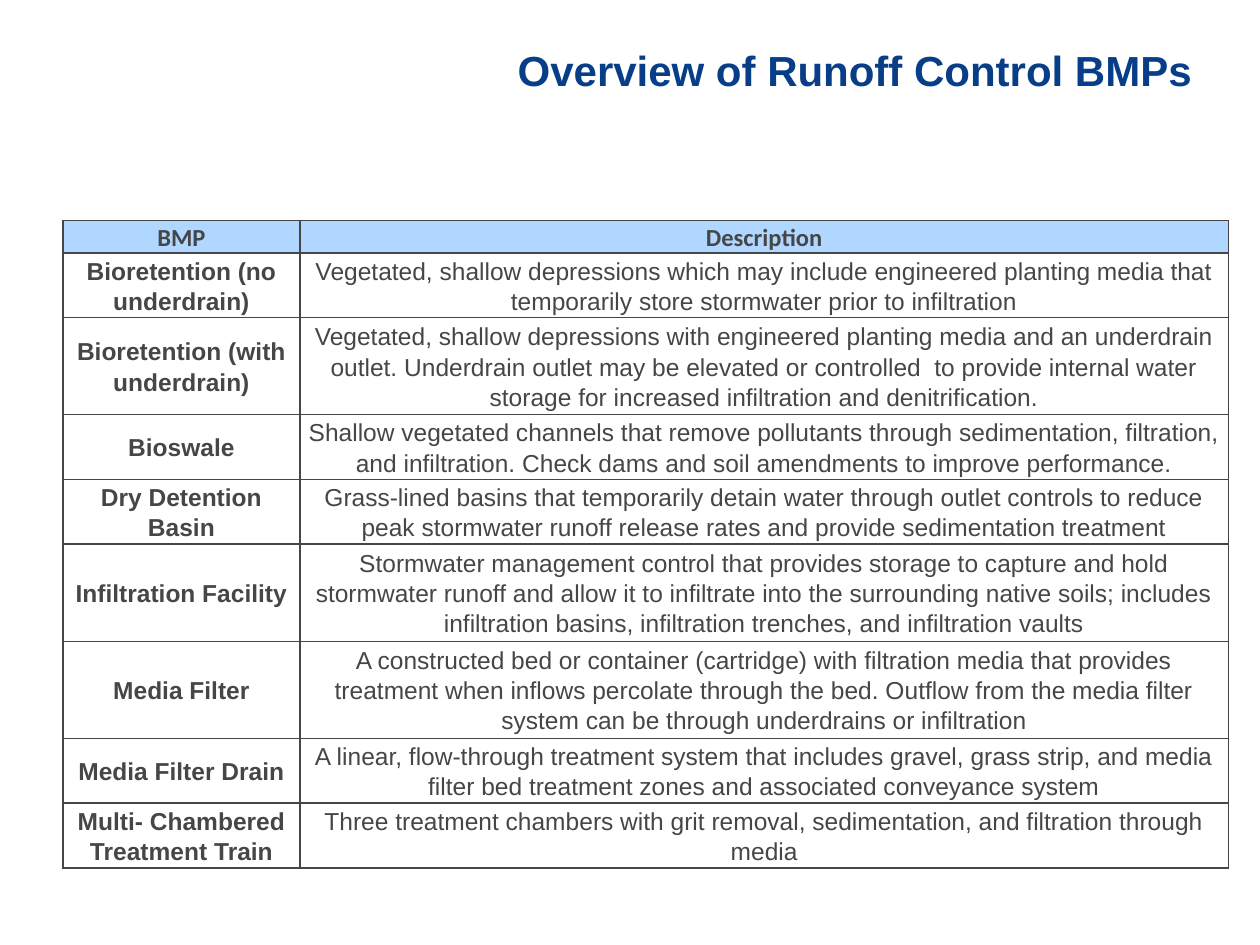
"""Build a slide with a table of runoff control BMPs."""
from lxml import etree
from pptx import Presentation
from pptx.dml.color import RGBColor
from pptx.enum import text
from pptx.oxml import ns
from pptx.util import Inches, Pt

TITLE = "Overview of Runoff Control BMPs"
HEADERS = ("BMP", "Description")
PRACTICES = [
    ("Bioretention (no underdrain)",
     "Vegetated, shallow depressions which may include engineered planting media "
     "that temporarily store stormwater prior to infiltration"),
    ("Bioretention (with underdrain)",
     "Vegetated, shallow depressions with engineered planting media and an underdrain "
     "outlet. Underdrain outlet may be elevated or controlled  to provide internal water "
     "storage for increased infiltration and denitrification."),
    ("Bioswale",
     "Shallow vegetated channels that remove pollutants through sedimentation, filtration, "
     "and infiltration. Check dams and soil amendments to improve performance."),
    ("Dry Detention Basin",
     "Grass-lined basins that temporarily detain water through outlet controls to reduce "
     "peak stormwater runoff release rates and provide sedimentation treatment"),
    ("Infiltration Facility",
     "Stormwater management control that provides storage to capture and hold stormwater "
     "runoff and allow it to infiltrate into the surrounding native soils; includes "
     "infiltration basins, infiltration trenches, and infiltration vaults"),
    ("Media Filter",
     "A constructed bed or container (cartridge) with filtration media that provides "
     "treatment when inflows percolate through the bed. Outflow from the media filter "
     "system can be through underdrains or infiltration"),
    ("Media Filter Drain",
     "A linear, flow-through treatment system that includes gravel, grass strip, and media "
     "filter bed treatment zones and associated conveyance system"),
    ("Multi- Chambered Treatment Train",
     "Three treatment chambers with grit removal, sedimentation, and filtration through media"),
]
COLUMN_WIDTHS = (1.88, 7.37)
SHORT_ROW, TALL_ROW = 0.16, 0.33
SHORT_ROWS = ("BMP", "Media Filter Drain")
NAVY, GRAY, LIGHT_BLUE = "073E87", "464648", "B0D7FF"


def color(value):
    return RGBColor.from_string(value)


def style(paragraph, size, name, value, bold, alignment):
    paragraph.alignment = alignment
    font = paragraph.font
    font.size, font.name, font.bold = Pt(size), name, bold
    font.color.rgb = color(value)


def add_borders(cell):
    properties = cell._tc.get_or_add_tcPr()
    for index, side in enumerate(("lnL", "lnR", "lnT", "lnB")):
        line = etree.Element(ns.qn("a:" + side), w=str(Pt(1)))
        fill = etree.SubElement(line, ns.qn("a:solidFill"))
        etree.SubElement(fill, ns.qn("a:srgbClr"), val=GRAY)
        properties.insert(index, line)


def fill_cell(cell, content, is_header, is_name):
    cell.text = content
    cell.vertical_anchor = text.MSO_ANCHOR.MIDDLE
    cell.margin_left = cell.margin_right = Inches(0.04 if is_header else 0.07)
    cell.margin_top = cell.margin_bottom = 0
    paragraph = cell.text_frame.paragraphs[0]
    paragraph.line_spacing = 1.1
    style(paragraph, 14, "Calibri" if is_header else "Arial", GRAY,
          is_header or is_name, text.PP_ALIGN.CENTER)
    if is_header:
        cell.fill.solid()
        cell.fill.fore_color.rgb = color(LIGHT_BLUE)
    else:
        cell.fill.background()
    add_borders(cell)


def add_title(slide):
    box = slide.shapes.add_textbox(Inches(2.38), Inches(0.08), Inches(7.12), Inches(0.94))
    frame = box.text_frame
    frame.word_wrap = True
    frame.vertical_anchor = text.MSO_ANCHOR.MIDDLE
    frame.margin_left = frame.margin_right = Inches(0.04)
    frame.margin_top = frame.margin_bottom = Inches(0.04)
    frame.text = TITLE
    style(frame.paragraphs[0], 24, "Arial", NAVY, True, text.PP_ALIGN.RIGHT)


def add_practice_table(slide):
    rows = [HEADERS, *PRACTICES]
    shape = slide.shapes.add_table(len(rows), len(HEADERS), Inches(0.5), Inches(1.75),
                                   Inches(sum(COLUMN_WIDTHS)), Inches(5.13))
    table = shape.table
    table.horz_banding = False
    for column, width in zip(table.columns, COLUMN_WIDTHS):
        column.width = Inches(width)
    for row_index, contents in enumerate(rows):
        height = SHORT_ROW if contents[0] in SHORT_ROWS else TALL_ROW
        table.rows[row_index].height = Inches(height)
        for column_index, content in enumerate(contents):
            fill_cell(table.cell(row_index, column_index), content,
                      row_index == 0, column_index == 0)
    shape.height = Inches(5.13)


def main():
    presentation = Presentation()
    presentation.slide_width, presentation.slide_height = Inches(10), Inches(7.5)
    slide = presentation.slides.add_slide(presentation.slide_layouts[6])
    add_title(slide)
    add_practice_table(slide)
    presentation.save("out.pptx")


if __name__ == "__main__":
    main()
